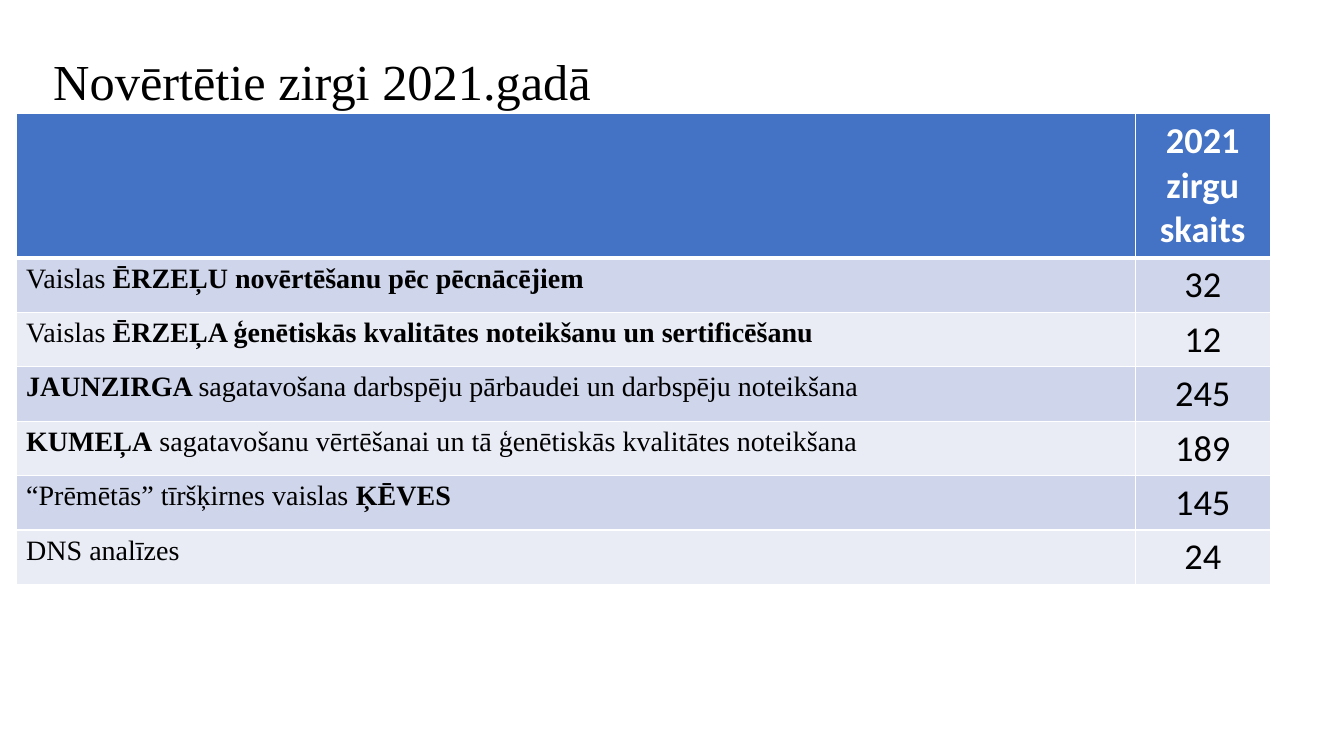
from lxml import etree
from pptx import Presentation
from pptx.dml.color import RGBColor
from pptx.enum.text import MSO_ANCHOR, PP_ALIGN
from pptx.oxml.ns import qn
from pptx.util import Inches, Pt

MIDDLE = MSO_ANCHOR.MIDDLE
LEFT, CENTER = PP_ALIGN.LEFT, PP_ALIGN.CENTER
SERIF, SANS = "Times New Roman", "Calibri"
COLORS = {"text": "000000", "white": "FFFFFF", "head": "4472C4",
          "odd": "CFD5EA", "even": "E9EBF5"}
TITLE = "Novērtētie zirgi 2021.gadā"
HEAD = ["2021", "zirgu skaits"]
ROWS = [
    ([("Vaislas ", False), ("ĒRZEĻU novērtēšanu pēc pēcnācējiem", True)], 32),
    ([("Vaislas ", False),
      ("ĒRZEĻA ģenētiskās kvalitātes noteikšanu un sertificēšanu", True)], 12),
    ([("JAUNZIRGA ", True),
      ("sagatavošana darbspēju pārbaudei un darbspēju noteikšana", False)], 245),
    ([("KUMEĻA", True),
      (" sagatavošanu vērtēšanai un tā ģenētiskās kvalitātes noteikšana", False)], 189),
    ([("“Prēmētās” tīršķirnes vaislas ", False), ("ĶĒVES", True)], 145),
    ([("DNS analīzes", False)], 24),
]


def write(para, runs, size, font, color="text", align=LEFT):
    """Add (text, bold) runs to a paragraph in one style."""
    para.alignment = align
    for text, bold in runs:
        run = para.add_run()
        run.text = text
        run.font.size = Pt(size)
        run.font.name = font
        run.font.bold = bold
        run.font.color.rgb = RGBColor.from_string(COLORS[color])


def paint(cell, fill, base=1):
    """Give a cell white borders and a solid fill."""
    props = cell._tc.get_or_add_tcPr()
    for side, width in (("L", 1), ("R", 1), ("T", 1), ("B", base)):
        line = etree.SubElement(props, qn(f"a:ln{side}"), w=str(Pt(width)))
        solid = etree.SubElement(line, qn("a:solidFill"))
        etree.SubElement(solid, qn("a:srgbClr"), val=COLORS["white"])
    cell.fill.solid()
    cell.fill.fore_color.rgb = RGBColor.from_string(COLORS[fill])


def add_title(slide, left, top, width, height):
    """Place the slide title, centred vertically in its box."""
    frame = slide.shapes.add_textbox(left, top, width, height).text_frame
    frame.word_wrap = True
    frame.vertical_anchor = MIDDLE
    para = frame.paragraphs[0]
    para.line_spacing = 0.9
    write(para, [(TITLE, False)], 36, SERIF)


def add_counts(slide, left, top, width, height):
    """Place the table of horse counts in its box."""
    table = slide.shapes.add_table(len(ROWS) + 1, 2, left, top, width, height).table
    last, step = Inches(1.34), Inches(0.54)
    table.columns[0].width = width - last
    table.columns[1].width = last
    table.rows[0].height = height - step * len(ROWS)
    for col in range(2):
        paint(table.cell(0, col), "head", 3)
    frame = table.cell(0, 1).text_frame
    for i, text in enumerate(HEAD):
        para = frame.add_paragraph() if i else frame.paragraphs[0]
        write(para, [(text, True)], 26, SANS, "white", CENTER)
    for i, (runs, count) in enumerate(ROWS, 1):
        table.rows[i].height = step
        name, value = table.cell(i, 0), table.cell(i, 1)
        for cell in (name, value):
            paint(cell, "odd" if i % 2 else "even", 1)
        write(name.text_frame.paragraphs[0], runs, 20, SERIF)
        write(value.text_frame.paragraphs[0], [(str(count), False)], 26, SANS,
              align=CENTER)


def main():
    """Build the slide and save it."""
    deck = Presentation()
    deck.slide_width, deck.slide_height = Inches(13.33), Inches(7.5)
    slide = deck.slides.add_slide(deck.slide_layouts[6])
    add_title(slide, Inches(0.43), Inches(0.11), Inches(11.5), Inches(1.45))
    add_counts(slide, Inches(0.16), Inches(1.13), Inches(12.44), Inches(4.67))
    deck.save("out.pptx")


if __name__ == "__main__":
    main()
